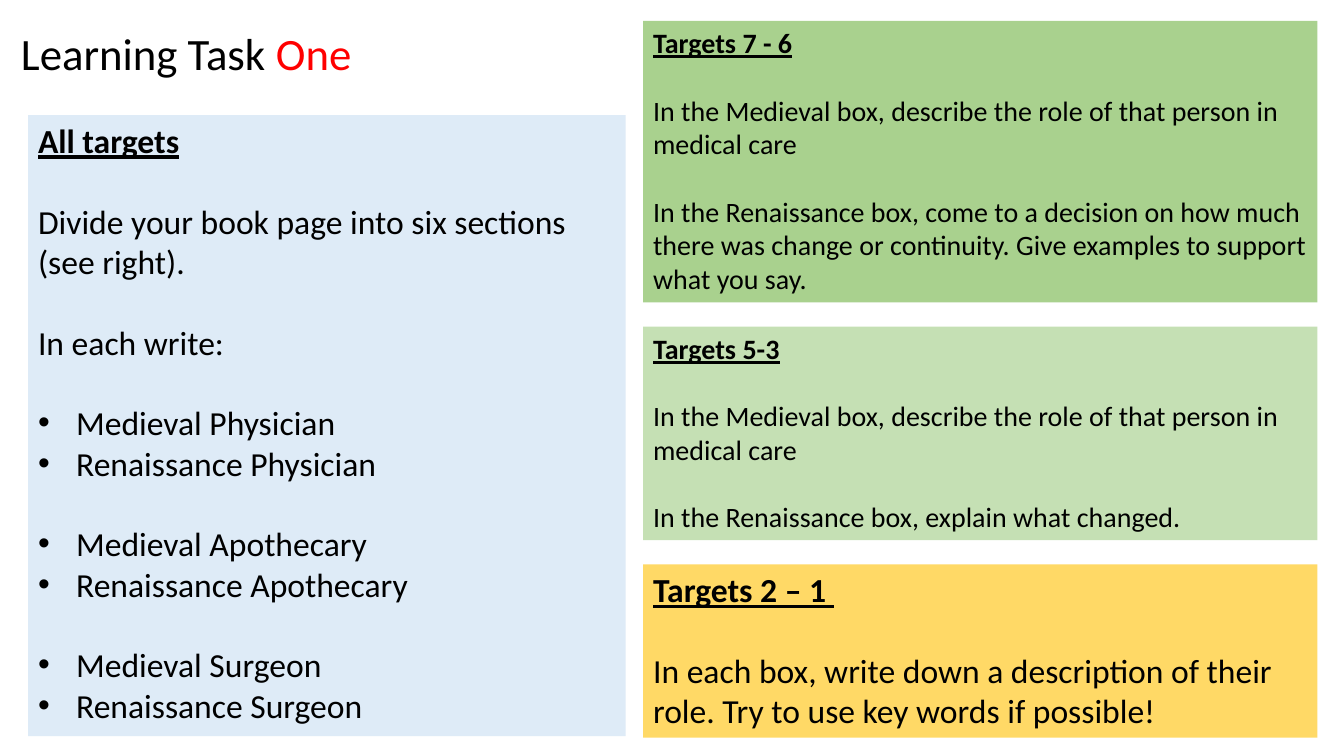
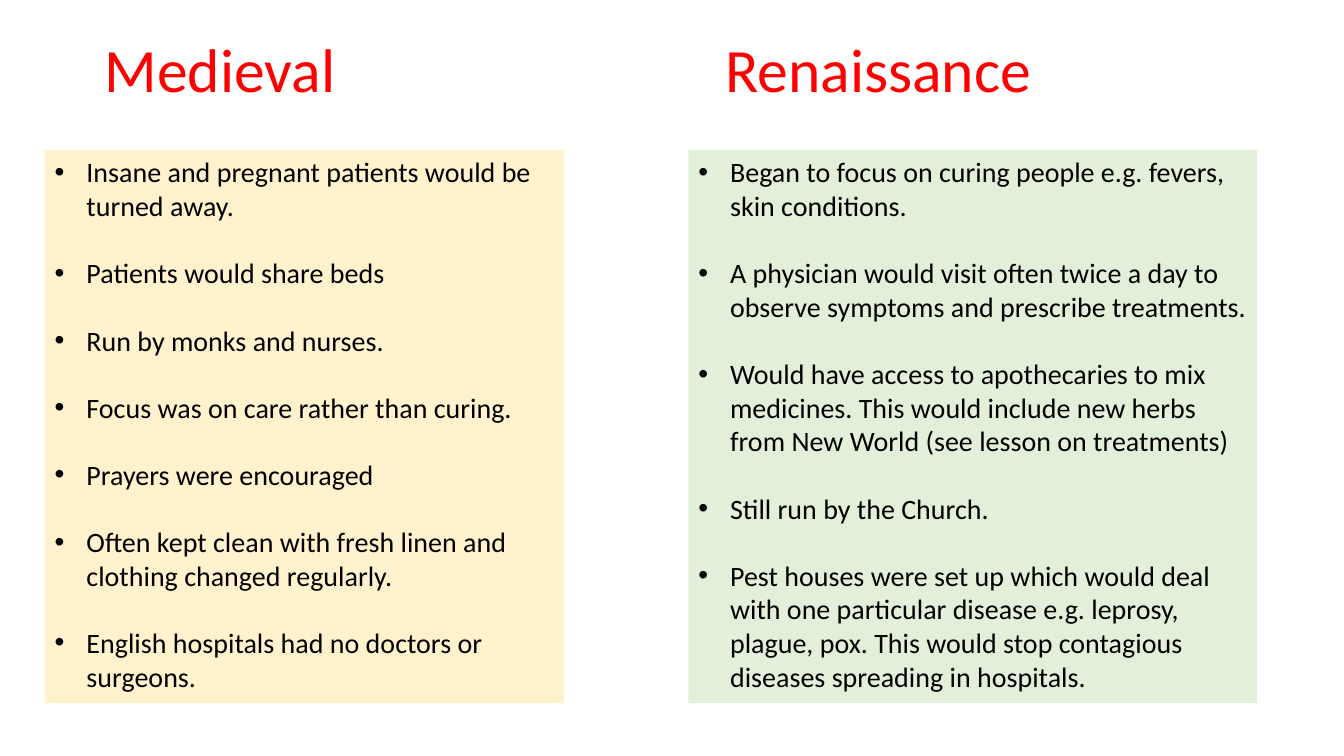
import dataclasses

import pptx
import pptx.dml.color
import pptx.enum.text
import pptx.oxml.ns
import pptx.util
from lxml import etree

Cm = pptx.util.Cm
Pt = pptx.util.Pt

FONT = "Calibri"
BLACK = "000000"
RED = "FF0000"
LINE_HEIGHT = 1.2  # one line of text, as a multiple of its size
INDENT_RATIO = 0.04  # bullet indent in cm per point of text size


@dataclasses.dataclass(frozen=True)
class Line:
    """One paragraph of a panel."""
    text: str
    heading: bool = False
    bullet: bool = False
    gap: bool = True  # leave one line free above


@dataclasses.dataclass(frozen=True)
class Panel:
    """A filled box of text, measured in centimetres."""
    left: float
    top: float
    width: float
    height: float
    fill: str
    size: int
    lines: tuple[Line, ...]


def color(hex_code: str) -> pptx.dml.color.RGBColor:
    return pptx.dml.color.RGBColor.from_string(hex_code)


def add_box(page, left: float, top: float, width: float, height: float):
    box = page.shapes.add_textbox(Cm(left), Cm(top), Cm(width), Cm(height))
    box.text_frame.word_wrap = True
    box.text_frame.vertical_anchor = pptx.enum.text.MSO_ANCHOR.TOP
    return box


def add_text(para, text: str, *, size: int, ink: str = BLACK,
             bold: bool = False, underline: bool = False) -> None:
    span = para.add_run()
    span.text = text
    span.font.name = FONT
    span.font.size = Pt(size)
    span.font.bold = bold
    span.font.underline = underline
    span.font.color.rgb = color(ink)


def add_bullet(para, size: int) -> None:
    indent = Cm(round(size * INDENT_RATIO, 2))
    properties = para._p.get_or_add_pPr()
    properties.set("marL", str(indent))
    properties.set("indent", str(-indent))
    bullet_font = etree.SubElement(properties, pptx.oxml.ns.qn("a:buFont"))
    bullet_font.set("typeface", "Arial")
    bullet = etree.SubElement(properties, pptx.oxml.ns.qn("a:buChar"))
    bullet.set("char", "•")


def add_title(page, left: float, top: float, width: float, height: float,
              size: int, spans: tuple[tuple[str, str], ...]) -> None:
    box = add_box(page, left, top, width, height)
    for text, ink in spans:
        add_text(box.text_frame.paragraphs[0], text, size=size, ink=ink)


def add_panel(page, panel: Panel) -> None:
    box = add_box(page, panel.left, panel.top, panel.width, panel.height)
    box.fill.solid()
    box.fill.fore_color.rgb = color(panel.fill)
    frame = box.text_frame
    for index, line in enumerate(panel.lines):
        para = frame.add_paragraph() if index else frame.paragraphs[0]
        if index and line.gap:
            para.space_before = Pt(panel.size * LINE_HEIGHT)
        if line.bullet:
            add_bullet(para, panel.size)
        add_text(para, line.text, size=panel.size,
                 bold=line.heading, underline=line.heading)


def bullets(*texts: str) -> tuple[Line, ...]:
    return tuple(Line(text, bullet=True) for text in texts)


def section(heading: str, *texts: str) -> tuple[Line, ...]:
    return (Line(heading, heading=True), *(Line(text) for text in texts))


# Learning task
ROLES = ("Physician", "Apothecary", "Surgeon")
ROLE_LINES = tuple(
    Line(f"{period} {role}", bullet=True, gap=period == "Medieval")
    for role in ROLES for period in ("Medieval", "Renaissance"))

ALL_TARGETS = Panel(0.71, 2.9, 15.06, 15.65, "DEEBF7", 24, section(
    "All targets",
    "Divide your book page into six sections (see right).",
    "In each write:") + ROLE_LINES)

DESCRIBE_ROLE = ("In the Medieval box, describe the role of that person "
                 "in medical care")

# Height, fill, text size and lines of each target panel, top to bottom
TARGETS = (
    (7.09, "A9D18E", 20, section(
        "Targets 7 - 6", DESCRIBE_ROLE,
        "In the Renaissance box, come to a decision on how much there was "
        "change or continuity. Give examples to support what you say.")),
    (5.38, "C5E0B4", 20, section(
        "Targets 5-3", DESCRIBE_ROLE,
        "In the Renaissance box, explain what changed.")),
    (4.37, "FFD966", 24, section(
        "Targets 2 – 1 ",
        "In each box, write down a description of their role. "
        "Try to use key words if possible!")),
)
TARGET_TOP = 0.53
TARGET_GAP = 0.61


def build_task(page) -> None:
    add_title(page, 0.28, 0.53, 19.23, 1.63, 32,
              (("Learning Task ", BLACK), ("One", RED)))
    add_panel(page, ALL_TARGETS)
    top = TARGET_TOP
    for height, fill, size, lines in TARGETS:
        add_panel(page, Panel(16.21, top, 16.99, height, fill, size, lines))
        top += height + TARGET_GAP


# Comparison of hospitals: title, title left, panel left, width, fill, lines
PERIODS = (
    ("Medieval", 2.39, 1.13, 13.08, "FFF2CC", bullets(
        "Insane and pregnant patients would be turned away.",
        "Patients would share beds",
        "Run by monks and nurses.",
        "Focus was on care rather than curing.",
        "Prayers were encouraged",
        "Often kept clean with fresh linen and clothing changed regularly.",
        "English hospitals had no doctors or surgeons.")),
    ("Renaissance", 18.03, 17.35, 14.33, "E2F0D9", bullets(
        "Began to focus on curing people e.g. fevers, skin conditions.",
        "A physician would visit often twice a day to observe symptoms and "
        "prescribe treatments.",
        "Would have access to apothecaries to mix medicines. This would "
        "include new herbs from New World (see lesson on treatments)",
        "Still run by the Church.",
        "Pest houses were set up which would deal with one particular "
        "disease e.g. leprosy, plague, pox. This would stop contagious "
        "diseases spreading in hospitals.")),
)


def build_comparison(page) -> None:
    for title, title_left, left, width, fill, lines in PERIODS:
        add_panel(page, Panel(left, 3.78, width, 13.94, fill, 20, lines))
        add_title(page, title_left, 0.66, 14.96, 2.13, 44, ((title, RED),))


def main() -> None:
    deck = pptx.Presentation()
    deck.slide_width = Cm(33.87)
    deck.slide_height = Cm(19.05)
    for build in (build_task, build_comparison):
        build(deck.slides.add_slide(deck.slide_layouts[6]))
    deck.save("out.pptx")


if __name__ == "__main__":
    main()
